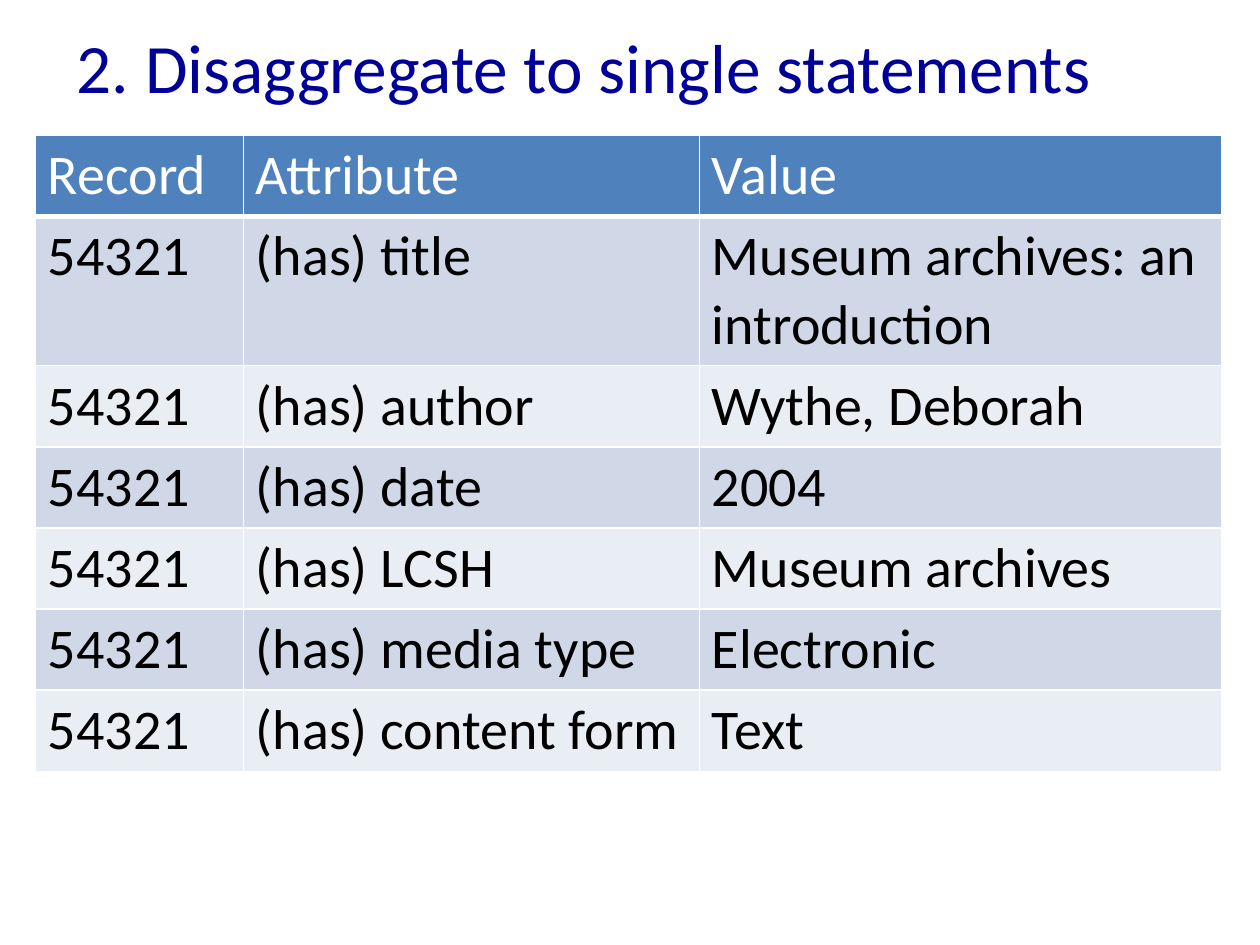
from typing import NamedTuple

from lxml.etree import SubElement
from pptx import Presentation
from pptx.dml.color import RGBColor as Color
from pptx.enum.text import MSO_ANCHOR as Anchor, PP_ALIGN as Align
from pptx.oxml.ns import qn
from pptx.util import Pt

COLORS = {
    "title": "000099",
    "header": "4F81BD",
    "odd_row": "D0D8E8",
    "even_row": "E9EDF4",
    "white": "FFFFFF",
    "text": "000000",
}
FONT = "Calibri"
RECORD_ID = "54321"
COLUMN_WIDTHS = (118.8, 260.6, 298.8)
ROW_HEIGHT = 29.2


class Statement(NamedTuple):
    record: str
    attribute: str
    value: str


HEADER = Statement("Record", "Attribute", "Value")
STATEMENTS = [
    Statement(RECORD_ID, f"(has) {attribute}", value)
    for attribute, value in (
        ("title", "Museum archives: an introduction"),
        ("author", "Wythe, Deborah"),
        ("date", "2004"),
        ("LCSH", "Museum archives"),
        ("media type", "Electronic"),
        ("content form", "Text"),
    )
]


def set_font(para, size: float, color: str) -> None:
    font = para.font
    font.name, font.size, font.bold = FONT, Pt(size), False
    font.color.rgb = Color.from_string(COLORS[color])


def set_borders(cell, bottom_width: float) -> None:
    properties = cell._tc.get_or_add_tcPr()
    widths = {"a:lnL": 1, "a:lnR": 1, "a:lnT": 1, "a:lnB": bottom_width}
    for side, width in widths.items():
        line = SubElement(properties, qn(side), w=str(Pt(width)))
        fill = SubElement(line, qn("a:solidFill"))
        SubElement(fill, qn("a:srgbClr"), val=COLORS["white"])


def fill_row(cells, statement: Statement, fill: str, color: str, bottom_width: float) -> None:
    for cell, text in zip(cells, statement):
        # Borders precede the fill in the cell properties
        set_borders(cell, bottom_width)
        cell.fill.solid()
        cell.fill.fore_color.rgb = Color.from_string(COLORS[fill])
        cell.text = text
        set_font(cell.text_frame.paragraphs[0], 32, color)


def main() -> None:
    deck = Presentation()
    deck.slide_width, deck.slide_height = Pt(720), Pt(540)
    page = deck.slides.add_slide(deck.slide_layouts[5])

    # Title
    title = page.shapes.title
    title.left, title.top, title.width, title.height = Pt(36.7), Pt(9.4), Pt(648), Pt(56.9)
    title.text_frame.text = "2. Disaggregate to single statements"
    title.text_frame.vertical_anchor = Anchor.MIDDLE
    para = title.text_frame.paragraphs[0]
    para.alignment = Align.LEFT
    set_font(para, 39.6, "title")

    # Table of statements
    row_count = len(STATEMENTS) + 1
    table = page.shapes.add_table(
        row_count, len(COLUMN_WIDTHS), Pt(20.2), Pt(77.2),
        Pt(sum(COLUMN_WIDTHS)), Pt(ROW_HEIGHT * row_count),
    ).table
    for column, width in zip(table.columns, COLUMN_WIDTHS):
        column.width = Pt(width)
    rows = list(table.rows)
    fill_row(rows[0].cells, HEADER, "header", "white", 3)
    for index, statement in enumerate(STATEMENTS, start=1):
        fill = "odd_row" if index % 2 else "even_row"
        fill_row(rows[index].cells, statement, fill, "text", 1)

    deck.save("out.pptx")


if __name__ == "__main__":
    main()
